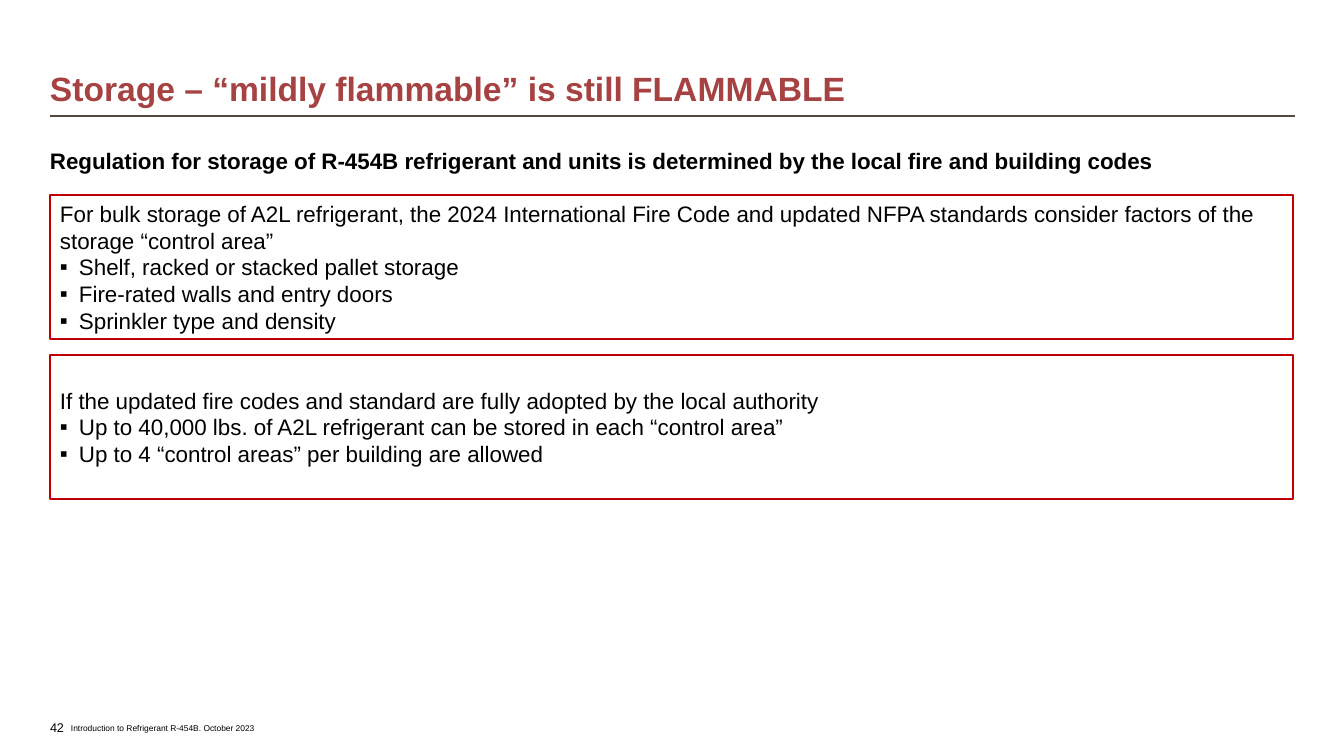
"""Build the slide on storing mildly flammable refrigerant."""
from lxml import etree
from pptx import Presentation
from pptx import util as u
from pptx.dml.color import RGBColor
from pptx.enum import shapes, text
from pptx.oxml.ns import qn

COLORS = {"title": "A64241", "text": "000000", "rule": "524743", "border": "C00000"}
FONT = "Arial"
BULLET = "▪"
LEFT, WIDTH = 50, 1245
RULE_Y = 116
TOP, MIDDLE, BOTTOM = text.MSO_ANCHOR.TOP, text.MSO_ANCHOR.MIDDLE, text.MSO_ANCHOR.BOTTOM

LABELS = [
    {"words": "42", "at": (LEFT, 715, 39, 24), "size": 9, "anchor": MIDDLE},
    {"words": "Introduction to Refrigerant R-454B. October 2023",
     "at": (71, 723, 222, 10), "size": 6},
    {"words": "Storage – “mildly flammable” is still FLAMMABLE",
     "at": (LEFT, 21, WIDTH, 88), "size": 24, "anchor": BOTTOM,
     "color": "title", "bold": True, "spacing": 0.9},
    {"words": "Regulation for storage of R-454B refrigerant and units is determined "
              "by the local fire and building codes",
     "at": (LEFT, 140, WIDTH, 50), "size": 16, "bold": True,
     "spacing": u.Pt(21), "margins": (0, 5, 10, 5)},
]
PANELS = [
    ("For bulk storage of A2L refrigerant, the 2024 International Fire Code and updated "
     "NFPA standards consider factors of the storage “control area”",
     ["Shelf, racked or stacked pallet storage",
      "Fire-rated walls and entry doors",
      "Sprinkler type and density"]),
    ("If the updated fire codes and standard are fully adopted by the local authority",
     ["Up to 40,000 lbs. of A2L refrigerant can be stored in each “control area”",
      "Up to 4 “control areas” per building are allowed"]),
]
PANEL_TOP, PANEL_WIDTH, PANEL_HEIGHT, PANEL_GAP = 195, 1243, 144, 16
PANEL_MARGINS = (10, 5, 10, 5)
PANEL_SIZE, INDENT = 16, 19


def px(length):
    return u.Emu(round(length * 914400 / 100.8))


def color(name):
    return RGBColor.from_string(COLORS[name])


def set_frame(frame, anchor, margins):
    frame.word_wrap = True
    frame.vertical_anchor = anchor
    (frame.margin_left, frame.margin_top,
     frame.margin_right, frame.margin_bottom) = map(px, margins)


def style(paragraph, size, ink="text", bold=False):
    paragraph.alignment = text.PP_ALIGN.LEFT
    for run in paragraph.runs:
        run.font.name = FONT
        run.font.size = u.Pt(size)
        run.font.bold = bold
        run.font.color.rgb = color(ink)


def add_bullet(paragraph):
    properties = paragraph._p.get_or_add_pPr()
    properties.set("marL", str(px(INDENT)))
    properties.set("indent", str(-px(INDENT)))
    etree.SubElement(properties, qn("a:buFont")).set("typeface", FONT)
    etree.SubElement(properties, qn("a:buChar")).set("char", BULLET)


def add_label(slide, words, at, size, anchor=TOP, color="text", bold=False,
              spacing=1.0, margins=(0, 0, 0, 0)):
    frame = slide.shapes.add_textbox(*map(px, at)).text_frame
    set_frame(frame, anchor, margins)
    frame.text = words
    frame.paragraphs[0].line_spacing = spacing
    style(frame.paragraphs[0], size, color, bold)


def add_panel(slide, top, lead, points):
    panel = slide.shapes.add_shape(
        shapes.MSO_SHAPE.RECTANGLE, px(LEFT), px(top), px(PANEL_WIDTH), px(PANEL_HEIGHT))
    panel.shadow.inherit = False
    panel.fill.background()
    panel.line.color.rgb = color("border")
    panel.line.width = u.Pt(1)
    frame = panel.text_frame
    set_frame(frame, MIDDLE, PANEL_MARGINS)
    frame.text = "\n".join([lead, *points])
    for paragraph in frame.paragraphs[1:]:
        add_bullet(paragraph)
    for paragraph in frame.paragraphs:
        style(paragraph, PANEL_SIZE)


def add_rule(slide):
    rule = slide.shapes.add_connector(
        shapes.MSO_CONNECTOR.STRAIGHT, px(LEFT), px(RULE_Y), px(LEFT + WIDTH), px(RULE_Y))
    rule.line.color.rgb = color("rule")
    rule.line.width = u.Pt(0.75)
    etree.SubElement(rule._element.spPr, qn("a:effectLst"))


def main():
    deck = Presentation()
    deck.slide_width, deck.slide_height = px(1344), px(756)
    slide = deck.slides.add_slide(deck.slide_layouts[6])
    add_rule(slide)
    for label in LABELS:
        add_label(slide, **label)
    for row, (lead, points) in enumerate(PANELS):
        add_panel(slide, PANEL_TOP + row * (PANEL_HEIGHT + PANEL_GAP), lead, points)
    deck.save("out.pptx")


if __name__ == "__main__":
    main()
